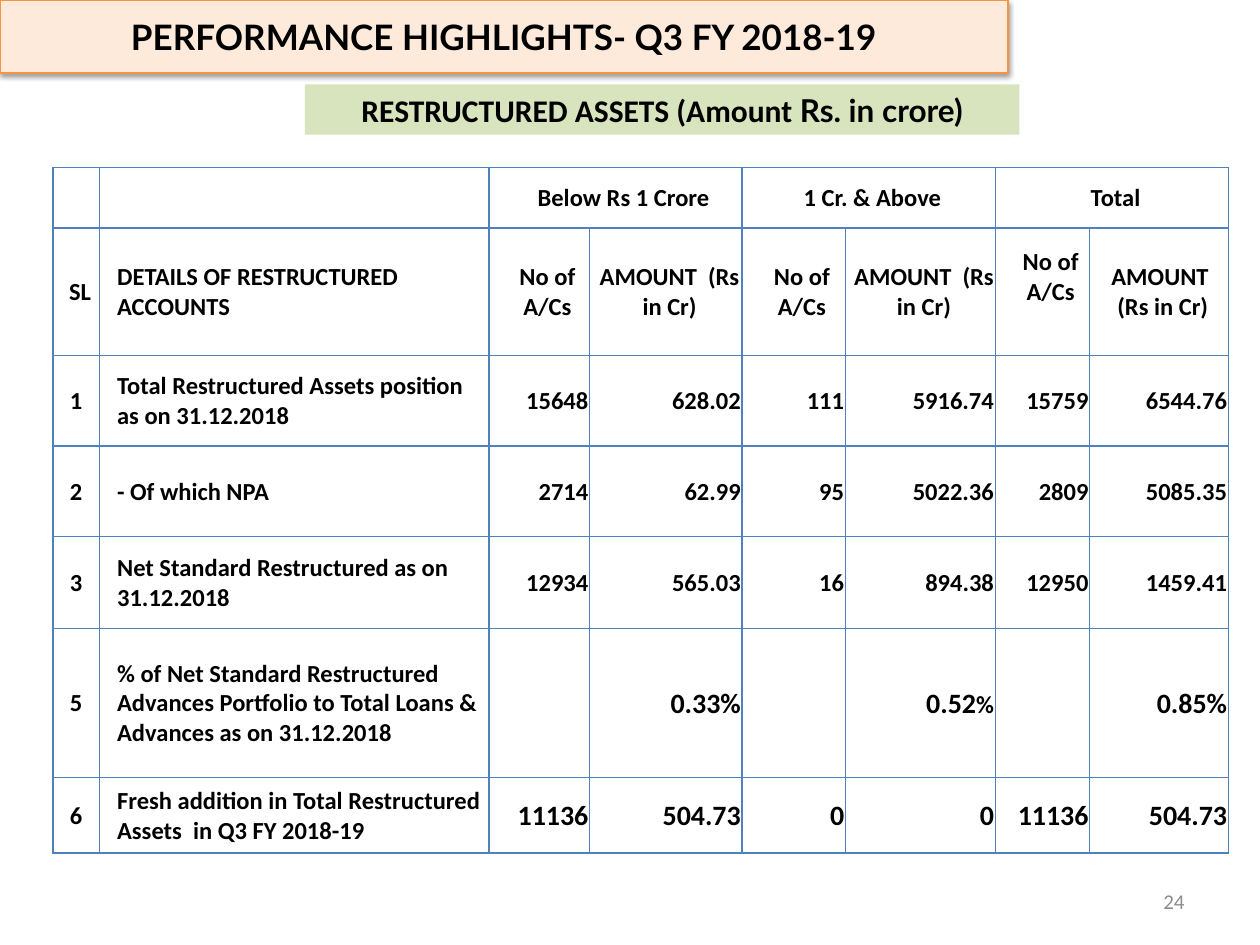
from dataclasses import dataclass

from lxml import etree
from pptx import Presentation
from pptx import util as u
from pptx.dml.color import RGBColor
from pptx.enum import shapes, text
from pptx.oxml import ns, parse_xml


@dataclass(frozen=True)
class Theme:
    font: str = "Calibri"
    accent_font: str = "Lato"
    ink: str = "000000"
    muted: str = "8C8C8C"
    title_fill: str = "FDEADA"
    title_line: str = "F69240"
    band_fill: str = "D7E4BD"
    grid: str = "4F81BD"
    title_size: int = 20
    band_size: int = 18
    large_size: int = 16
    body_size: int = 14
    number_size: int = 12


THEME = Theme()
CENTER, LEFT, RIGHT = (text.PP_ALIGN.CENTER, text.PP_ALIGN.LEFT, text.PP_ALIGN.RIGHT)

# Content
TITLE = "PERFORMANCE HIGHLIGHTS- Q3 FY 2018-19"
BAND = [("RESTRUCTURED ASSETS (Amount ", THEME.font), ("Rs. in crore)", THEME.accent_font)]
PAGE_NUMBER = "24"
GROUPS = ["Below Rs 1 Crore", "1 Cr. & Above", "Total"]
HEADINGS = ["SL", "DETAILS OF RESTRUCTURED ACCOUNTS"] + ["No of A/Cs", "AMOUNT  (Rs in Cr)"] * len(GROUPS)
ROWS = [
    ["1", "Total Restructured Assets position as on 31.12.2018",
     "15648", "628.02", "111", "5916.74", "15759", "6544.76"],
    ["2", "- Of which NPA",
     "2714", "62.99", "95", "5022.36", "2809", "5085.35"],
    ["3", "Net Standard Restructured as on 31.12.2018",
     "12934", "565.03", "16", "894.38", "12950", "1459.41"],
    ["5", "% of Net Standard Restructured Advances Portfolio to Total Loans & Advances as on 31.12.2018",
     "", "0.33%", "", "0.52%", "", "0.85%"],
    ["6", "Fresh addition in Total Restructured Assets  in Q3 FY 2018-19",
     "11136", "504.73", "0", "0", "11136", "504.73"],
]
LARGE_ROWS = {"5", "6"}

# Layout in inches
TITLE_BOX = (0, 0, 8, 0.58)
BAND_BOX = (2.42, 0.67, 5.67, 0.4)
NUMBER_BOX = (7.17, 6.95, 2.33, 0.4)
TABLE_ORIGIN = (0.42, 1.33)
COLUMN_WIDTHS = [0.37, 3.09, 0.8, 1.21, 0.82, 1.19, 0.75, 1.1]
ROW_HEIGHTS = [0.48, 1.01, 0.72, 0.72, 0.73, 1.18, 0.6]
WIDE_INDENT, NARROW_INDENT = 0.13, 0.06
RAISED_MARGIN = 0.24


def inches(box):
    return [u.Inches(length) for length in box]


def set_font(font, size, name=THEME.font, color=THEME.ink, bold=True):
    font.size, font.name, font.bold = u.Pt(size), name, bold
    font.color.rgb = RGBColor.from_string(color)


def paint(shape, fill):
    shape.fill.solid()
    shape.fill.fore_color.rgb = RGBColor.from_string(fill)


def add_shadow(shape):
    effects = parse_xml(
        f'<a:effectLst {ns.nsdecls("a")}><a:outerShdw blurRad="{u.Pt(3.1)}" dist="{u.Pt(1.6)}" '
        'dir="5400000" rotWithShape="0"><a:srgbClr val="000000"><a:alpha val="38000"/>'
        '</a:srgbClr></a:outerShdw></a:effectLst>')
    shape.element.spPr.append(effects)


def add_borders(cell):
    properties = cell._tc.get_or_add_tcPr()
    for position, side in enumerate(("lnL", "lnR", "lnT", "lnB")):
        line = etree.Element(ns.qn(f"a:{side}"), w=str(u.Pt(1)))
        fill = etree.SubElement(line, ns.qn("a:solidFill"))
        etree.SubElement(fill, ns.qn("a:srgbClr"), val=THEME.grid)
        properties.insert(position, line)


def write_cell(cell, words, align, indent=0.0, size=THEME.body_size):
    para = cell.text_frame.paragraphs[0]
    para.alignment = align
    set_font(para.font, size)
    para._p.get_or_add_pPr().set("marL", str(u.Inches(indent)))
    para.add_run().text = words
    return para


def add_title(page):
    title = page.shapes.title
    title.left, title.top, title.width, title.height = inches(TITLE_BOX)
    paint(title, THEME.title_fill)
    title.line.color.rgb = RGBColor.from_string(THEME.title_line)
    title.line.width = u.Pt(0.75)
    add_shadow(title)
    title.text_frame.text = TITLE
    title.text_frame.vertical_anchor = text.MSO_ANCHOR.MIDDLE
    para = title.text_frame.paragraphs[0]
    para.alignment = CENTER
    set_font(para.font, THEME.title_size, THEME.accent_font)


def add_band(page):
    band = page.shapes.add_shape(shapes.MSO_SHAPE.RECTANGLE, *inches(BAND_BOX))
    band.shadow.inherit = False
    paint(band, THEME.band_fill)
    band.line.fill.background()
    band.text_frame.word_wrap = True
    band.text_frame.vertical_anchor = text.MSO_ANCHOR.TOP
    para = band.text_frame.paragraphs[0]
    para.alignment = CENTER
    for words, name in BAND:
        span = para.add_run()
        span.text = words
        set_font(span.font, THEME.band_size, name)


def add_page_number(page):
    box = page.shapes.add_textbox(*inches(NUMBER_BOX))
    box.text_frame.word_wrap = True
    box.text_frame.vertical_anchor = text.MSO_ANCHOR.MIDDLE
    para = box.text_frame.paragraphs[0]
    para.text, para.alignment = PAGE_NUMBER, RIGHT
    set_font(para.font, THEME.number_size, color=THEME.muted, bold=False)


def add_assets_table(page):
    size = (sum(COLUMN_WIDTHS), sum(ROW_HEIGHTS))
    table = page.shapes.add_table(
        len(ROW_HEIGHTS), len(COLUMN_WIDTHS), *inches(TABLE_ORIGIN + size)).table
    table.first_row = table.horz_banding = False
    for column, width in zip(table.columns, COLUMN_WIDTHS):
        column.width = u.Inches(width)
    for row, height in zip(table.rows, ROW_HEIGHTS):
        row.height = u.Inches(height)
    for cell in table.iter_cells():
        cell.margin_left = cell.margin_right = cell.margin_top = u.Inches(0.01)
        cell.margin_bottom = 0
        cell.vertical_anchor = text.MSO_ANCHOR.MIDDLE
        cell.fill.background()
        add_borders(cell)

    # Group headings, each over a count and an amount column
    for index, group in enumerate(GROUPS):
        column = 2 + 2 * index
        table.cell(0, column).merge(table.cell(0, column + 1))
        write_cell(table.cell(0, column), group, CENTER, NARROW_INDENT if index else WIDE_INDENT)

    # Column headings
    for column, heading in enumerate(HEADINGS):
        indent = NARROW_INDENT if column == 0 or column % 2 and column > 1 else WIDE_INDENT
        write_cell(table.cell(1, column), heading, LEFT if column == 1 else CENTER, indent)
    table.cell(1, len(HEADINGS) - 2).margin_bottom = u.Inches(RAISED_MARGIN)

    # Figures
    for row, (serial, detail, *figures) in enumerate(ROWS, start=2):
        write_cell(table.cell(row, 0), serial, CENTER)
        write_cell(table.cell(row, 1), detail, LEFT, WIDE_INDENT)
        figure_size = THEME.large_size if serial in LARGE_ROWS else THEME.body_size
        for column, figure in enumerate(figures, start=2):
            if figure == "0.52%":  # this percent sign is set smaller
                para = write_cell(table.cell(row, column), figure[:-1], RIGHT, size=figure_size)
                span = para.add_run()
                span.text = figure[-1]
                span.font.size = u.Pt(THEME.body_size)
            elif figure:
                write_cell(table.cell(row, column), figure, RIGHT, size=figure_size)


def main():
    deck = Presentation()
    deck.slide_width, deck.slide_height = u.Inches(10), u.Inches(7.5)
    page = deck.slides.add_slide(deck.slide_layouts.get_by_name("Title Only"))
    add_band(page)
    add_page_number(page)
    add_title(page)
    add_assets_table(page)
    deck.save("out.pptx")


if __name__ == "__main__":
    main()
